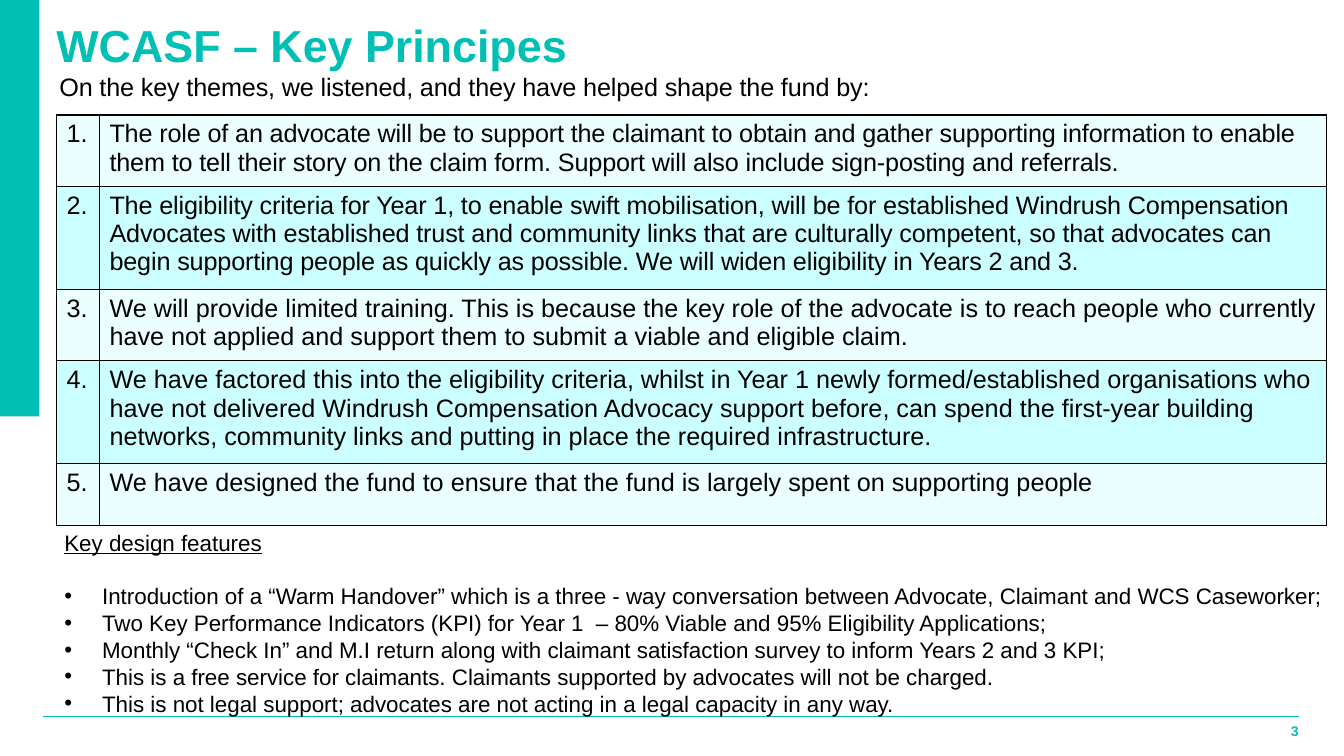
from dataclasses import dataclass

from lxml.etree import SubElement
from pptx import Presentation
from pptx.dml.color import RGBColor
from pptx.enum.shapes import MSO_CONNECTOR, MSO_SHAPE
from pptx.enum.text import PP_ALIGN
from pptx.oxml import parse_xml
from pptx.oxml.ns import nsdecls, qn
from pptx.slide import Slide
from pptx.table import _Cell
from pptx.text.text import TextFrame, _Paragraph
from pptx.util import Emu, Inches, Pt

SLIDE_WIDTH = Inches(13.33)
SLIDE_HEIGHT = Inches(7.5)


@dataclass(frozen=True)
class Theme:
    font: str = "Arial"
    accent: str = "00C0B5"
    ink: str = "000000"
    row_fills: tuple[str, str] = ("EBFFFF", "CCFFFF")
    title_size: int = 32
    body_size: int = 18
    feature_size: int = 16
    number_size: int = 10


@dataclass(frozen=True)
class Area:
    """A rectangle in percent of the slide's width and height."""
    left: float
    top: float
    width: float
    height: float

    def box(self) -> tuple[Emu, Emu, Emu, Emu]:
        return across(self.left), down(self.top), across(self.width), down(self.height)


@dataclass(frozen=True)
class Principle:
    text: str
    height: float
    tight: bool = False


THEME = Theme()
TWO_LINES, THREE_LINES, LAST_ROW = 9.47, 13.6, 8.13
COLUMN_WIDTHS = (3.2, 91.32)

PRINCIPLES = (
    Principle("The role of an advocate will be to support the claimant to obtain and gather "
              "supporting information to enable them to tell their story on the claim form. "
              "Support will also include sign-posting and referrals.", TWO_LINES, tight=True),
    Principle("The eligibility criteria for Year 1, to enable swift mobilisation, will be for "
              "established Windrush Compensation Advocates with established trust and community "
              "links that are culturally competent, so that advocates can begin supporting people "
              "as quickly as possible. We will widen eligibility in Years 2 and 3.",
              THREE_LINES, tight=True),
    Principle("We will provide limited training. This is because the key role of the advocate is "
              "to reach people who currently have not applied and support them to submit a viable "
              "and eligible claim.", TWO_LINES),
    Principle("We have factored this into the eligibility criteria, whilst in Year 1 newly "
              "formed/established organisations who have not delivered Windrush Compensation "
              "Advocacy support before, can spend the first-year building networks, community "
              "links and putting in place the required infrastructure.", THREE_LINES),
    Principle("We have designed the fund to ensure that the fund is largely spent on supporting "
              "people", LAST_ROW),
)

FEATURES = (
    "Introduction of a “Warm Handover” which is a three - way conversation between Advocate, "
    "Claimant and WCS Caseworker;",
    "Two Key Performance Indicators (KPI) for Year 1  – 80% Viable and 95% Eligibility Applications;",
    "Monthly “Check In” and M.I return along with claimant satisfaction survey to inform Years 2 "
    "and 3 KPI;",
    "This is a free service for claimants. Claimants supported by advocates will not be charged.",
    "This is not legal support; advocates are not acting in a legal capacity in any way.",
)


def across(percent: float) -> Emu:
    return Emu(round(SLIDE_WIDTH * percent / 100))


def down(percent: float) -> Emu:
    return Emu(round(SLIDE_HEIGHT * percent / 100))


def format_runs(paragraph: _Paragraph, size: int, color: str = THEME.ink,
                bold: bool = False, tight: bool = False) -> None:
    for run in paragraph.runs:
        run.font.name = THEME.font
        run.font.size = Pt(size)
        run.font.bold = bold
        run.font.color.rgb = RGBColor.from_string(color)
        if tight:
            run._r.get_or_add_rPr().set("spc", "-10")


def add_text(slide: Slide, area: Area, text: str) -> TextFrame:
    text_frame = slide.shapes.add_textbox(*area.box()).text_frame
    text_frame.word_wrap = True
    text_frame.text = text
    return text_frame


def clear_margins(text_frame: TextFrame) -> None:
    text_frame.margin_left = text_frame.margin_right = 0
    text_frame.margin_top = text_frame.margin_bottom = 0


def add_bullet(paragraph: _Paragraph) -> None:
    properties = paragraph._p.get_or_add_pPr()
    indent = across(2.81)
    properties.set("marL", str(indent))
    properties.set("indent", str(-indent))
    SubElement(properties, qn("a:buFont")).set("typeface", THEME.font)
    SubElement(properties, qn("a:buChar")).set("char", "•")


def outline_cell(cell: _Cell) -> None:
    properties = cell._tc.get_or_add_tcPr()
    for index, side in enumerate(("lnL", "lnR", "lnT", "lnB")):
        properties.insert(index, parse_xml(
            f'<a:{side} {nsdecls("a")} w="{Pt(1)}"><a:solidFill>'
            f'<a:srgbClr val="{THEME.ink}"/></a:solidFill></a:{side}>'))


def add_frame(slide: Slide) -> None:
    """Draw the side bar, the footer line and the page number."""
    accent = RGBColor.from_string(THEME.accent)
    bar = slide.shapes.add_shape(MSO_SHAPE.RECTANGLE, *Area(0, 0, 2.93, 55.07).box())
    bar.shadow.inherit = False
    bar.fill.solid()
    bar.fill.fore_color.rgb = accent
    bar.line.fill.background()

    footer_line = slide.shapes.add_connector(
        MSO_CONNECTOR.STRAIGHT, across(3.23), down(94.8), across(96.62), down(94.8))
    footer_line.line.color.rgb = accent
    footer_line.line.width = Pt(0.75)
    SubElement(footer_line._element.spPr, qn("a:effectLst"))

    page_number = add_text(slide, Area(91.07, 95.33, 5.55, 2.13), "3")
    clear_margins(page_number)
    paragraph = page_number.paragraphs[0]
    paragraph.alignment = PP_ALIGN.RIGHT
    paragraph.line_spacing = 1.1
    format_runs(paragraph, THEME.number_size, THEME.accent, bold=True)


def add_heading(slide: Slide) -> None:
    title = add_text(slide, Area(4.2, 2.4, 92.12, 12.67), "WCASF – Key Principes")
    clear_margins(title)
    format_runs(title.paragraphs[0], THEME.title_size, THEME.accent, bold=True)

    introduction = add_text(
        slide, Area(3.68, 8.75, 93.4, 5.33),
        "On the key themes, we listened, and they have helped shape the fund by:")
    format_runs(introduction.paragraphs[0], THEME.body_size, tight=True)


def add_principles(slide: Slide) -> None:
    area = Area(4.2, 15.2, sum(COLUMN_WIDTHS), sum(item.height for item in PRINCIPLES))
    table = slide.shapes.add_table(len(PRINCIPLES), len(COLUMN_WIDTHS), *area.box()).table
    table.first_row = table.horz_banding = False
    for column, width in zip(table.columns, COLUMN_WIDTHS):
        column.width = across(width)
    for index, principle in enumerate(PRINCIPLES):
        table.rows[index].height = down(principle.height)
        fill = RGBColor.from_string(THEME.row_fills[index % 2])
        for column, text in enumerate((f"{index + 1}.", principle.text)):
            cell = table.cell(index, column)
            cell.text_frame.text = text
            cell.fill.solid()
            cell.fill.fore_color.rgb = fill
            outline_cell(cell)
            format_runs(cell.text_frame.paragraphs[0], THEME.body_size,
                        tight=principle.tight and column == 1)


def add_features(slide: Slide) -> None:
    text_frame = add_text(slide, Area(4.05, 69.3, 95.95, 25.5), "Key design features")
    heading = text_frame.paragraphs[0]
    heading.space_after = Pt(19)
    heading.runs[0].font.underline = True
    for feature in FEATURES:
        paragraph = text_frame.add_paragraph()
        paragraph.text = feature
        add_bullet(paragraph)
    for paragraph in text_frame.paragraphs:
        format_runs(paragraph, THEME.feature_size)


def main() -> None:
    presentation = Presentation()
    presentation.slide_width = SLIDE_WIDTH
    presentation.slide_height = SLIDE_HEIGHT
    slide = presentation.slides.add_slide(presentation.slide_layouts[6])
    add_frame(slide)
    add_heading(slide)
    add_principles(slide)
    add_features(slide)
    presentation.save("out.pptx")


if __name__ == "__main__":
    main()
